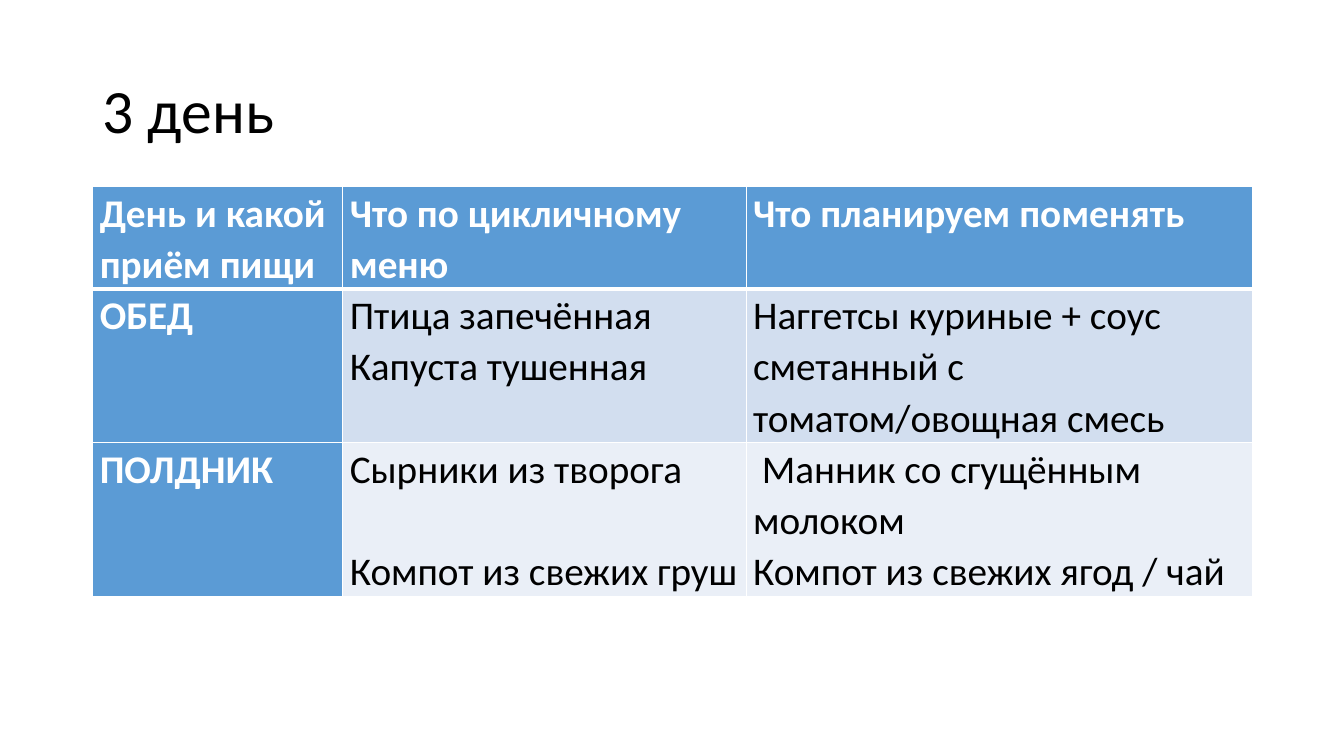
from dataclasses import dataclass

from lxml import etree
from pptx import Presentation
from pptx.dml.color import RGBColor
from pptx.enum import text as t
from pptx.oxml import ns
from pptx.util import Inches, Pt

FONT = "Calibri"
BLACK = RGBColor(0x00, 0x00, 0x00)
WHITE = RGBColor(0xFF, 0xFF, 0xFF)
BLUE = RGBColor(0x5B, 0x9B, 0xD5)
BAND_DARK = RGBColor(0xD2, 0xDE, 0xEF)
BAND_LIGHT = RGBColor(0xEA, 0xEF, 0xF7)

LEFT, WIDTH = 0.92, 11.5
COLUMN_WIDTHS = (2.48, 4.0, 5.02)
BLANK_LINE = 36.5  # points, height of one table line


@dataclass(frozen=True)
class Line:
    text: str
    gap: float = 0


@dataclass(frozen=True)
class MenuRow:
    cells: tuple[tuple[Line, ...], ...]
    height: float
    band: RGBColor


MENU = (
    MenuRow(((Line("День и какой приём пищи"),),
             (Line("Что по цикличному меню"),),
             (Line("Что планируем поменять"),)), 1.01, BLUE),
    MenuRow(((Line("ОБЕД"),),
             (Line("Птица запечённая"), Line("Капуста тушенная")),
             (Line("Наггетсы куриные + соус сметанный с томатом/овощная смесь"),)),
            1.52, BAND_DARK),
    MenuRow(((Line("ПОЛДНИК"),),
             (Line("Сырники из творога"), Line("Компот из свежих груш", BLANK_LINE)),
             (Line(" Манник со сгущённым молоком"), Line("Компот из свежих ягод / чай"))),
            1.52, BAND_LIGHT),
)


def write(para, text: str, *, size: float, color: RGBColor, bold: bool = False,
          spacing: float = 1.0, before: float = 0) -> None:
    """Add one formatted run of text to a paragraph."""
    para.alignment = t.PP_ALIGN.LEFT
    para.line_spacing = spacing
    para.space_before = Pt(before)
    span = para.add_run()
    span.text = text
    span.font.name = FONT
    span.font.size = Pt(size)
    span.font.bold = bold
    span.font.color.rgb = color


def add_border(cell, side: str, points: float) -> None:
    """Give one side of a cell a white line."""
    properties = cell._tc.get_or_add_tcPr()
    line = etree.SubElement(properties, ns.qn(f"a:ln{side}"), w=str(Pt(points)))
    fill = etree.SubElement(line, ns.qn("a:solidFill"))
    etree.SubElement(fill, ns.qn("a:srgbClr"), val=str(WHITE))


def fill_cell(cell, lines: tuple[Line, ...], *, row: int, heading: bool,
              band: RGBColor) -> None:
    """Format a table cell and write its lines."""
    cell.margin_left = cell.margin_right = Inches(0.07)
    cell.margin_top = cell.margin_bottom = 0
    thick = {(0, "B"), (1, "T")}
    for side in "LRTB":
        add_border(cell, side, 3 if (row, side) in thick else 1)
    cell.fill.solid()
    cell.fill.fore_color.rgb = BLUE if heading else band
    frame = cell.text_frame
    for index, line in enumerate(lines):
        para = frame.add_paragraph() if index else frame.paragraphs[0]
        write(para, line.text, size=28, color=WHITE if heading else BLACK,
              bold=heading, spacing=1.07, before=line.gap)


def add_title(page, text: str) -> None:
    """Place and format the title placeholder."""
    box = page.shapes.title
    box.left, box.top = Inches(LEFT), Inches(0.4)
    box.width, box.height = Inches(WIDTH), Inches(1.45)
    frame = box.text_frame
    frame.auto_size = t.MSO_AUTO_SIZE.NONE
    frame.vertical_anchor = t.MSO_ANCHOR.MIDDLE
    write(frame.paragraphs[0], text, size=44, color=BLACK, spacing=0.9)


def add_menu(page, menu: tuple[MenuRow, ...]) -> None:
    """Build the menu table with a heading row and heading column."""
    height = sum(entry.height for entry in menu)
    table = page.shapes.add_table(
        len(menu), len(COLUMN_WIDTHS), Inches(LEFT), Inches(1.85),
        Inches(WIDTH), Inches(height)).table
    table.first_col = True
    for column, width in zip(table.columns, COLUMN_WIDTHS):
        column.width = Inches(width)
    for row, entry in enumerate(menu):
        table.rows[row].height = Inches(entry.height)
        for col, lines in enumerate(entry.cells):
            fill_cell(table.cell(row, col), lines, row=row,
                      heading=row == 0 or col == 0, band=entry.band)


def main() -> None:
    deck = Presentation()
    deck.slide_width, deck.slide_height = Inches(13.33), Inches(7.5)
    page = deck.slides.add_slide(deck.slide_layouts[5])
    page.background.fill.solid()
    page.background.fill.fore_color.rgb = WHITE

    # Title
    add_title(page, "3 день")

    # Menu table
    add_menu(page, MENU)

    deck.save("out.pptx")


if __name__ == "__main__":
    main()
